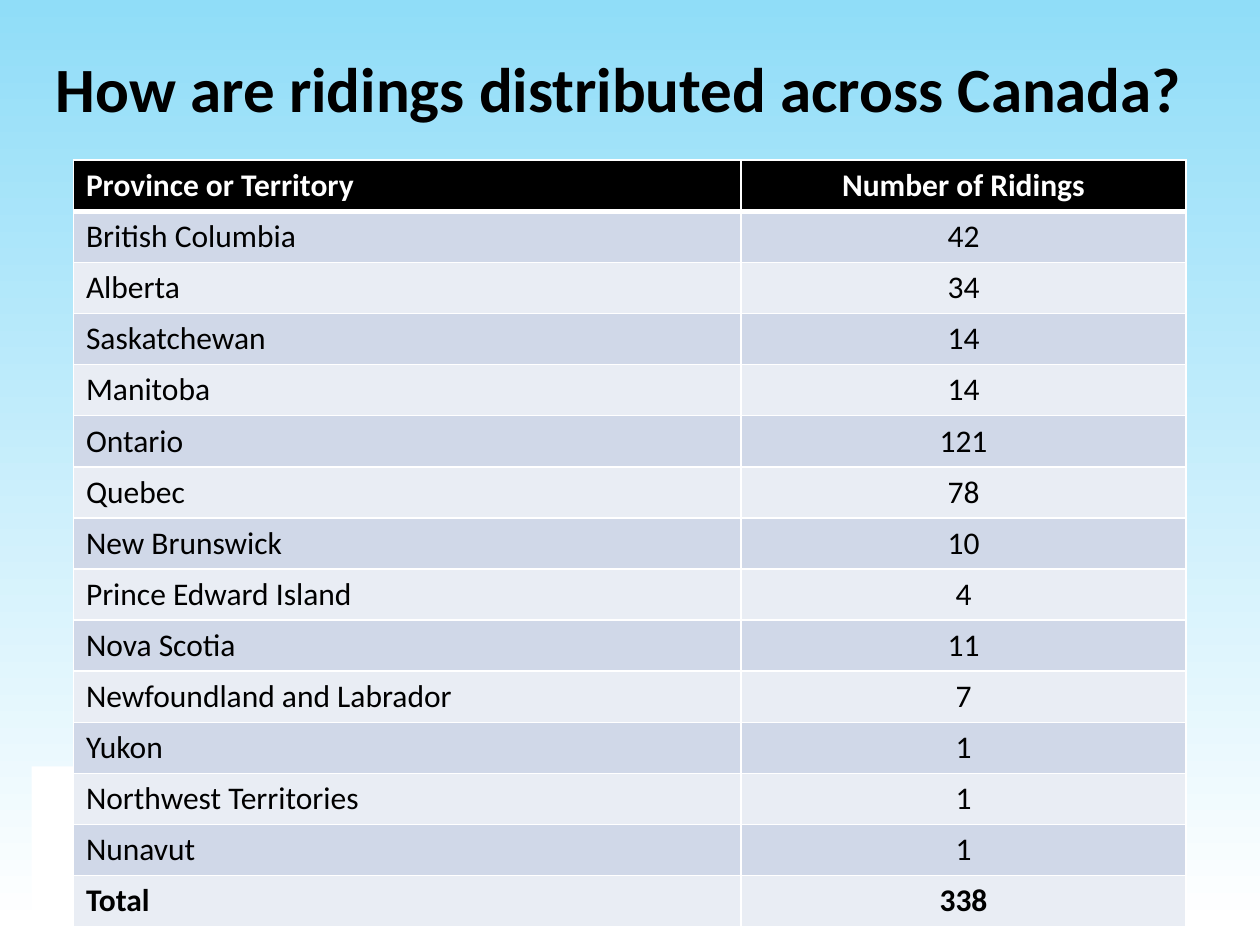
import pptx
import pptx.util
import pptx.dml.color
import pptx.enum.shapes
import pptx.enum.text
import pptx.oxml
import pptx.oxml.ns
from dataclasses import dataclass

Cm = pptx.util.Cm
Pt = pptx.util.Pt
ALIGN = pptx.enum.text.PP_ALIGN
MIDDLE = pptx.enum.text.MSO_ANCHOR.MIDDLE


@dataclass(frozen=True)
class Theme:
    face: str = "Calibri"
    ink: str = "000000"
    white: str = "FFFFFF"
    sky: str = "90DDF8"
    bands: tuple = ("D0D8E8", "E9EDF4")
    title: int = 36
    body: int = 18
    thin: int = 1
    thick: int = 3


THEME = Theme()

RIDINGS = [
    ("Province or Territory", "Number of Ridings"),
    ("British Columbia", "42"),
    ("Alberta", "34"),
    ("Saskatchewan", "14"),
    ("Manitoba", "14"),
    ("Ontario", "121"),
    ("Quebec", "78"),
    ("New Brunswick", "10"),
    ("Prince Edward Island", "4"),
    ("Nova Scotia", "11"),
    ("Newfoundland and Labrador", "7"),
    ("Yukon", "1"),
    ("Northwest Territories", "1"),
    ("Nunavut", "1"),
    ("Total", "338"),
]


def tint(code):
    return pptx.dml.color.RGBColor.from_string(code)


def write(frame, text, align, size, color, bold):
    """Fill a text frame with one formatted paragraph."""
    para = frame.paragraphs[0]
    para.text = text
    para.alignment = align
    style = {"name": THEME.face, "size": Pt(size), "bold": bold}
    for key, value in style.items():
        setattr(para.font, key, value)
    para.font.color.rgb = tint(color)


def edge(cell, side, width):
    """Draw one white cell border; side is L, R, T or B."""
    space = pptx.oxml.ns.nsdecls("a")
    line = pptx.oxml.parse_xml(
        f'<a:ln{side} {space} w="{Pt(width)}"><a:solidFill>'
        f'<a:srgbClr val="{THEME.white}"/></a:solidFill></a:ln{side}>')
    cell._tc.get_or_add_tcPr().append(line)


def sky(slide):
    """Background that fades from white at the foot to blue at the top."""
    fill = slide.background.fill
    fill.gradient()
    fill.gradient_angle = 90
    stops = ((0.02, THEME.white), (1, THEME.sky))
    for stop, (place, color) in zip(fill.gradient_stops, stops):
        stop.position = place
        stop.color.rgb = tint(color)


def patch(slide, left, top, width, height):
    """Plain white block in the lower corner."""
    shape = slide.shapes.add_shape(
        pptx.enum.shapes.MSO_SHAPE.RECTANGLE,
        Cm(left), Cm(top), Cm(width), Cm(height))
    shape.shadow.inherit = False
    shape.fill.solid()
    shape.fill.fore_color.rgb = tint(THEME.white)
    shape.line.fill.background()


def title(slide, left, top, width, height):
    """Heading in the title placeholder."""
    shape = slide.shapes.title
    box = {"left": left, "top": top, "width": width, "height": height}
    for key, value in box.items():
        setattr(shape, key, Cm(value))
    frame = shape.text_frame
    frame.word_wrap = True
    frame.vertical_anchor = MIDDLE
    write(frame, "How are ridings distributed across Canada?",
          ALIGN.CENTER, THEME.title, THEME.ink, True)


def table(slide, left, top, width, height):
    """Banded table with a black header and a bold total."""
    count = len(RIDINGS)
    grid = slide.shapes.add_table(
        count, 2, Cm(left), Cm(top), Cm(width), Cm(height)).table
    for col, share in zip(grid.columns, (0.6, 0.4)):
        col.width = Cm(width * share)
    for r, values in enumerate(RIDINGS):
        grid.rows[r].height = Cm(height / count)
        head = r == 0
        for c, text in enumerate(values):
            cell = grid.cell(r, c)
            # Header rule is thick on both cells that share it
            rules = {"L": THEME.thin, "R": THEME.thin,
                     "T": THEME.thick if r == 1 else THEME.thin,
                     "B": THEME.thick if head else THEME.thin}
            for side, weight in rules.items():
                edge(cell, side, weight)
            cell.fill.solid()
            cell.fill.fore_color.rgb = tint(
                THEME.ink if head else THEME.bands[(r - 1) % 2])
            write(cell.text_frame, text, ALIGN.CENTER if c else ALIGN.LEFT,
                  THEME.body, THEME.white if head else THEME.ink,
                  r in (0, count - 1))


def main():
    deck = pptx.Presentation()
    deck.slide_width, deck.slide_height = Cm(25.4), Cm(19.05)
    slide = deck.slides.add_slide(deck.slide_layouts.get_by_name("Title Only"))
    sky(slide)
    patch(slide, 0.64, 15.45, 4.45, 3.3)
    title(slide, 0.2, 0.2, 24.56, 3.1)
    table(slide, 1.48, 3.23, 22.43, 15.45)
    deck.save("out.pptx")


if __name__ == "__main__":
    main()
